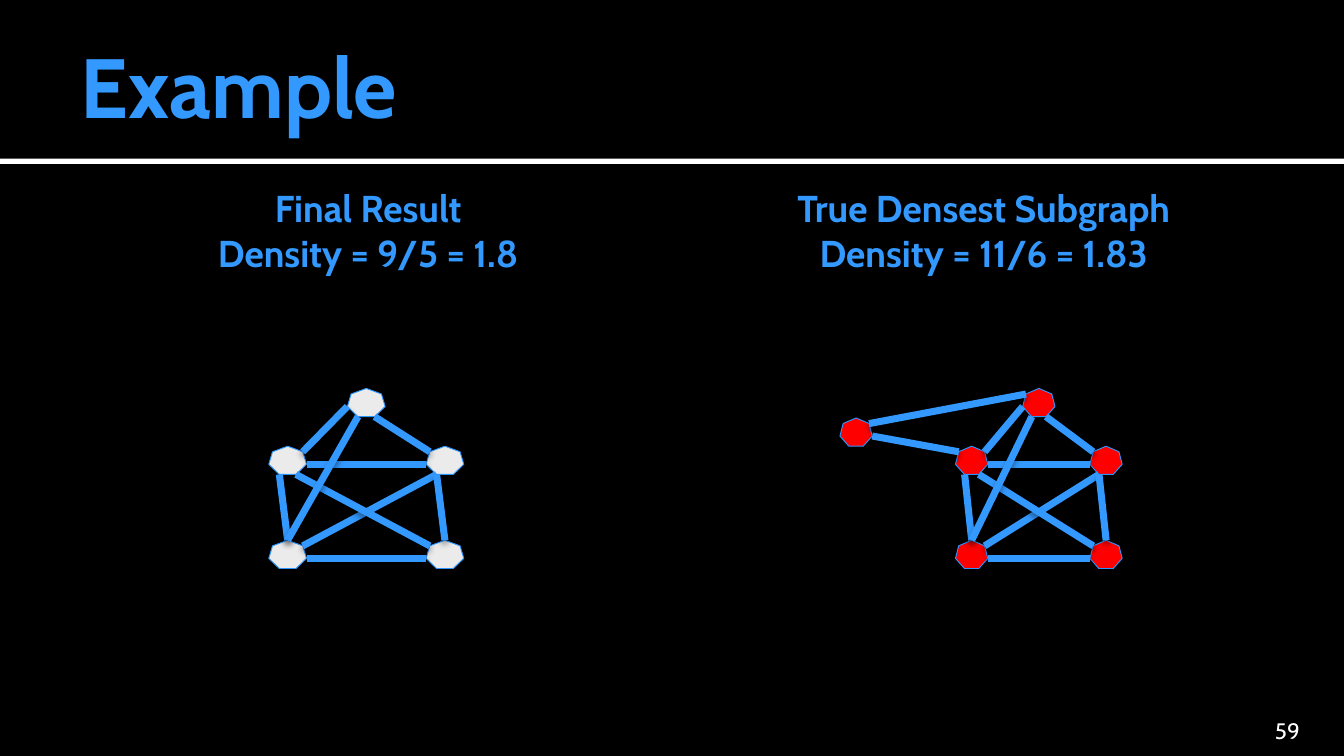
import dataclasses

import lxml.etree
import pptx
import pptx.dml.color
import pptx.enum.shapes
import pptx.enum.text
import pptx.oxml.ns
import pptx.util

CELL = 0.1  # inches; the slide is a 16:9 grid, 100 columns wide
COLS = 100
ROWS = COLS * 9 / 16

ALIGN = pptx.enum.text.PP_ALIGN
ANCHOR = pptx.enum.text.MSO_ANCHOR
SHAPE = pptx.enum.shapes.MSO_SHAPE


@dataclasses.dataclass(frozen=True)
class Theme:
    font: str = "Cabin"
    background: str = "000000"
    accent: str = "3399FF"
    outline: str = "2D96FE"
    light: str = "FFFFFF"
    result_node: str = "EBEBEB"
    densest_node: str = "FF0000"
    title_size: float = 45
    heading_size: float = 20
    number_size: float = 12
    edge_width: float = 3.78
    outline_width: float = 0.5


THEME = Theme()

# Columns from the left node column, and rows from the slide's top.
NODES = {
    "upper left": (0, 33.2),
    "lower left": (0, 40.2),
    "lower right": (10, 40.2),
    "upper right": (10, 33.2),
    "apex": (5, 28.9),
    "outer": (-8.6, 31.1),
}
NODE_WIDTH, NODE_HEIGHT = 2.4, 2.1

# Corners of a heptagon as shares of its box.
CORNERS = {
    "top": (0.5, 0),
    "ne": (0.9, 0.2),
    "e": (1, 0.64),
    "se": (0.72, 1),
    "sw": (0.28, 1),
    "w": (0, 0.64),
    "nw": (0.1, 0.2),
}

EDGES = [
    ("upper left", "e", "upper right", "w"),
    ("upper left", "sw", "lower left", "top"),
    ("lower left", "ne", "upper right", "sw"),
    ("upper left", "se", "lower right", "nw"),
    ("upper right", "sw", "lower right", "top"),
    ("lower left", "e", "lower right", "w"),
    ("apex", "w", "upper left", "ne"),
    ("apex", "sw", "lower left", "top"),
    ("apex", "se", "upper right", "nw"),
    ("upper left", "nw", "outer", "e"),
    ("apex", "nw", "outer", "ne"),
]


def grid(*cells):
    return [pptx.util.Inches(n * CELL) for n in cells]


def rgb(color):
    return pptx.dml.color.RGBColor.from_string(color)


def write(sp, text, *, size, color=THEME.accent, bold=True, align=ALIGN.LEFT,
          anchor=ANCHOR.MIDDLE, insets=(1, 0.5, 0.5, 0.5)):
    """Fill sp with one paragraph per line; insets run left, top, right, bottom."""
    tf = sp.text_frame
    tf.text = text
    tf.word_wrap = True
    tf.auto_size = pptx.enum.text.MSO_AUTO_SIZE.NONE
    tf.vertical_anchor = anchor
    (tf.margin_left, tf.margin_top,
     tf.margin_right, tf.margin_bottom) = grid(*insets)
    for p in tf.paragraphs:
        p.alignment = align
        p.space_before = pptx.util.Pt(0)
        for r in p.runs:
            r.font.name = THEME.font
            r.font.size = pptx.util.Pt(size)
            r.font.bold = bold
            r.font.color.rgb = rgb(color)


def place(sp, *box):
    sp.left, sp.top, sp.width, sp.height = grid(*box)


def add_shadow(sp, blur):
    qn = pptx.oxml.ns.qn
    spPr = sp._element.spPr
    effects = spPr.find(qn("a:effectLst"))
    if effects is None:
        effects = lxml.etree.SubElement(spPr, qn("a:effectLst"))
    shadow = lxml.etree.SubElement(
        effects, qn("a:outerShdw"), blurRad=str(pptx.util.Pt(blur)),
        dist=str(pptx.util.Pt(2)), dir="5400000", rotWithShape="0")
    black = lxml.etree.SubElement(shadow, qn("a:srgbClr"), val="000000")
    lxml.etree.SubElement(black, qn("a:alpha"), val="38000")


def add_node(shapes, box, color):
    sp = shapes.add_shape(SHAPE.HEPTAGON, *grid(*box))
    sp.fill.solid()
    sp.fill.fore_color.rgb = rgb(color)
    sp.line.color.rgb = rgb(THEME.outline)
    sp.line.width = pptx.util.Pt(THEME.outline_width)
    sp.shadow.inherit = False
    add_shadow(sp, 3.1)


def add_edge(shapes, start, end):
    line = shapes.add_connector(
        pptx.enum.shapes.MSO_CONNECTOR.STRAIGHT, *grid(*start, *end))
    line.line.color.rgb = rgb(THEME.accent)
    line.line.width = pptx.util.Pt(THEME.edge_width)
    add_shadow(line, 3.5)


def corner(box, name):
    left, top, width, height = box
    x, y = CORNERS[name]
    return left + x * width, top + y * height


def add_graph(s, left, color, names, stretch=1):
    """Draw the named nodes and every edge between them, widened by stretch."""
    shapes = s.shapes.add_group_shape().shapes
    boxes = {}
    for name in names:
        col, row = NODES[name]
        boxes[name] = (left + col * stretch, row,
                       NODE_WIDTH * stretch, NODE_HEIGHT)
        add_node(shapes, boxes[name], color)
    for a, a_corner, b, b_corner in EDGES:
        if a in boxes and b in boxes:
            add_edge(shapes, corner(boxes[a], a_corner),
                     corner(boxes[b], b_corner))


def add_rule(s):
    sp = s.shapes.add_shape(SHAPE.RECTANGLE, *grid(0, 11.8, COLS, 0.4))
    sp.fill.solid()
    sp.fill.fore_color.rgb = rgb(THEME.light)
    sp.line.fill.background()
    sp.shadow.inherit = False


def add_headings(s):
    title, left, left_content, right, right_content = s.placeholders
    for sp in (left_content, right_content):
        sp._element.getparent().remove(sp._element)
    place(title, 5, 1.2, 90, 10.3)
    write(title, "Example", size=THEME.title_size)
    headings = [
        (left, 5, "Final Result\nDensity = 9/5 = 1.8"),
        (right, 50.8, "True Densest Subgraph\nDensity = 11/6 = 1.83"),
    ]
    for sp, col, text in headings:
        place(sp, col, 13.9, 44.2, 5.9)
        write(sp, text, size=THEME.heading_size, align=ALIGN.CENTER,
              insets=(1.6, 1, 1, 0.5))


def add_slide_number(s, number):
    sp = s.shapes.add_textbox(*grid(89.7, 53.1, 8, 2.3))
    write(sp, number, size=THEME.number_size, color=THEME.light, bold=False,
          align=ALIGN.RIGHT, anchor=ANCHOR.BOTTOM, insets=(1, 0.5, 1, 0))


def main():
    prs = pptx.Presentation()
    prs.slide_width, prs.slide_height = grid(COLS, ROWS)
    s = prs.slides.add_slide(prs.slide_layouts.get_by_name("Comparison"))
    s.background.fill.solid()
    s.background.fill.fore_color.rgb = rgb(THEME.background)
    add_rule(s)
    add_headings(s)
    add_slide_number(s, "59")
    add_graph(s, 71.1, THEME.densest_node, list(NODES))
    add_graph(s, 20, THEME.result_node,
              [name for name in NODES if name != "outer"], stretch=1.17)
    prs.save("out.pptx")


if __name__ == "__main__":
    main()
